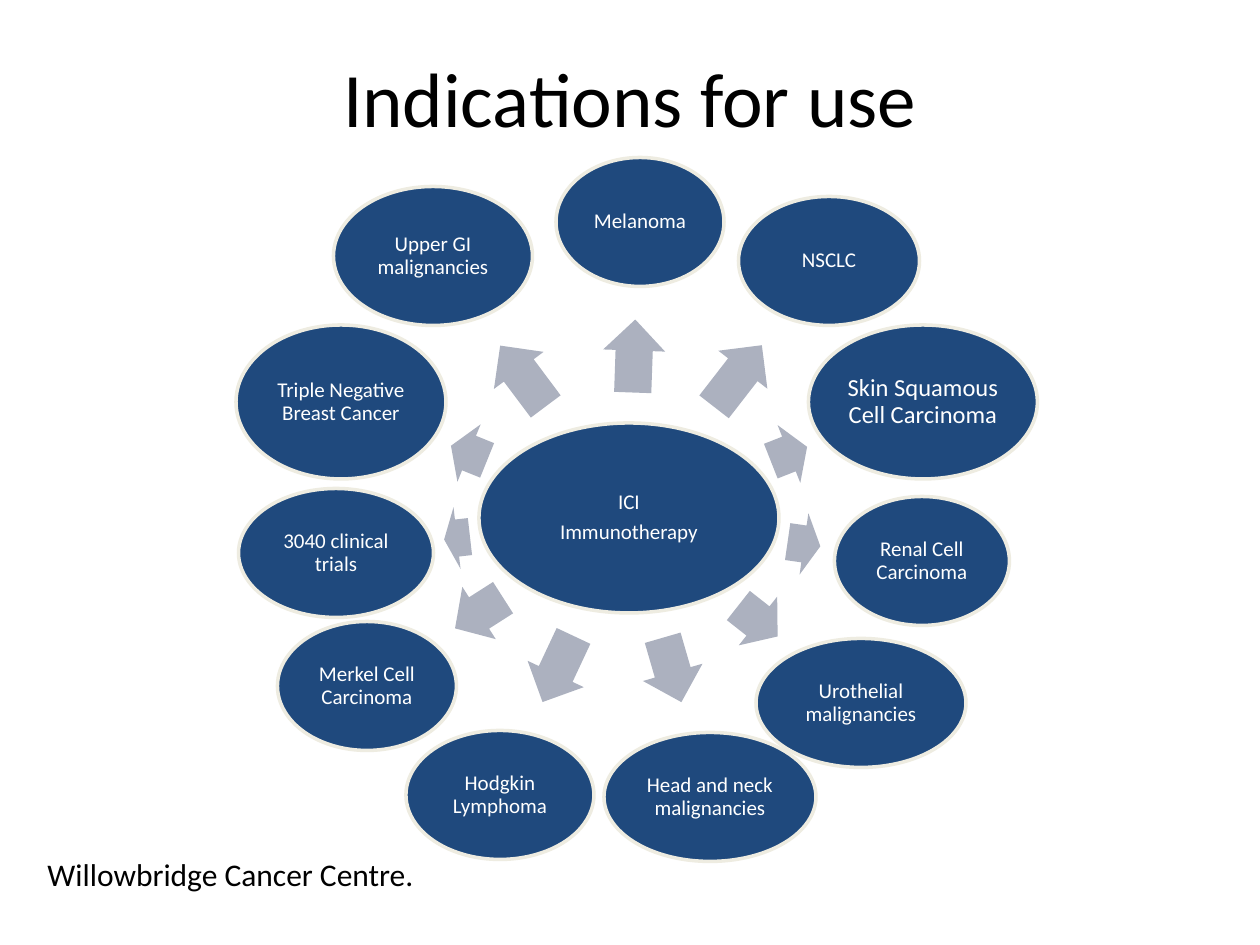
from pptx import Presentation
from pptx.dml.color import RGBColor
from pptx.enum.shapes import MSO_SHAPE
from pptx.enum.text import MSO_ANCHOR, PP_ALIGN
from pptx.util import Emu, Pt

PX = 914400 / 126
COLORS = {"navy": "1F497D", "cream": "EEECE1", "arrow": "ACB1BF",
          "white": "FFFFFF", "black": "000000"}
ARROW_HEIGHT = 62

# Offsets run from the hub centre to the centre of each part:
# label, text size, bubble (x, y, width, height), arrow (x, y, length, angle)
INDICATIONS = [
    ("Melanoma", 12, (11, -296, 168, 129), (5, -162, 73, 272)),
    ("NSCLC", 12, (200, -257, 181, 129), (109, -142, 78, 307.8)),
    ("Skin Squamous Cell Carcinoma", 14, (294, -116, 229, 154), (160, -64, 39, 338.5)),
    ("Renal Cell Carcinoma", 12, (293, 43, 175, 129), (175, 26, 33, 8.2)),
    ("Urothelial malignancies", 12, (232, 185, 210, 129), (129, 103, 50, 38.2)),
    ("Head and neck malignancies", 12, (81, 279, 212, 129), (43, 152, 67, 73.8)),
    ("Hodgkin Lymphoma", 12, (-129, 277, 188, 129), (-71, 151, 73, 115.1)),
    ("Merkel Cell Carcinoma", 12, (-262, 168, 179, 129), (-150, 95, 57, 147.4)),
    ("3040 clinical trials", 12, (-293, 35, 195, 129), (-172, 20, 26, 173.5)),
    ("Triple Negative Breast Cancer", 12, (-288, -116, 210, 154), (-160, -65, 39, 202)),
    ("Upper GI malignancies", 12, (-196, -262, 199, 139), (-106, -142, 76, 233.2)),
]


def px(value):
    return Emu(round(value * PX))


def color(name):
    return RGBColor.from_string(COLORS[name])


def set_all(target, values):
    for name, value in values.items():
        setattr(target, name, value)


def write(frame, lines, size, ink, align, para_format=None):
    frame.word_wrap = True
    for index, line in enumerate(lines):
        para = frame.paragraphs[0] if index == 0 else frame.add_paragraph()
        set_all(para, {"alignment": align, **(para_format or {})})
        span = para.add_run()
        span.text = line
        set_all(span.font, {"name": "Calibri", "size": Pt(size)})
        span.font.color.rgb = color(ink)


def add_centred(page, kind, x, y, width, height, fill):
    shape = page.shapes.add_shape(kind, px(x - width / 2), px(y - height / 2),
                                  px(width), px(height))
    shape.shadow.inherit = False
    shape.fill.solid()
    shape.fill.fore_color.rgb = color(fill)
    return shape


def add_bubble(page, x, y, width, height, lines, size, inset):
    bubble = add_centred(page, MSO_SHAPE.OVAL, x, y, width, height, "navy")
    bubble.line.color.rgb = color("cream")
    bubble.line.width = Pt(2)
    frame = bubble.text_frame
    sides = ("left", "top", "right", "bottom")
    set_all(frame, {f"margin_{side}": px(inset) for side in sides})
    frame.vertical_anchor = MSO_ANCHOR.MIDDLE
    write(frame, lines, size, "white", PP_ALIGN.CENTER,
          {"line_spacing": 0.9, "space_after": Pt(4.2)})


def add_arrow(page, x, y, length, angle):
    arrow = add_centred(page, MSO_SHAPE.RIGHT_ARROW, x, y, length, ARROW_HEIGHT, "arrow")
    arrow.line.fill.background()
    arrow.rotation = angle
    arrow.adjustments[0] = 0.6
    arrow.adjustments[1] = 0.5


def add_wheel(page, hub):
    left, top, width, height = hub
    x, y = left + width / 2, top + height / 2
    add_bubble(page, x, y, width, height, ["ICI", "Immunotherapy"], 12, 0)
    for label, size, bubble, arrow in INDICATIONS:
        add_arrow(page, x + arrow[0], y + arrow[1], *arrow[2:])
        add_bubble(page, x + bubble[0], y + bubble[1], *bubble[2:], [label], size, 2)


def place_title(page, box, text):
    title = page.shapes.title
    set_all(title, dict(zip(("left", "top", "width", "height"), map(px, box))))
    title.text_frame.vertical_anchor = MSO_ANCHOR.MIDDLE
    write(title.text_frame, [text], 44, "black", PP_ALIGN.CENTER)


def add_credit(page, box, text):
    credit = page.shapes.add_textbox(*map(px, box))
    write(credit.text_frame, [text], 18, "black", PP_ALIGN.LEFT)


def main():
    deck = Presentation()
    set_all(deck, {"slide_width": px(1260), "slide_height": px(945)})
    page = deck.slides.add_slide(deck.slide_layouts[5])
    place_title(page, (63, 38, 1134, 117), "Indications for use")
    add_wheel(page, (479, 423, 300, 190))
    add_credit(page, (35, 849, 1191, 89), "Willowbridge Cancer Centre.")
    deck.save("out.pptx")


if __name__ == "__main__":
    main()
